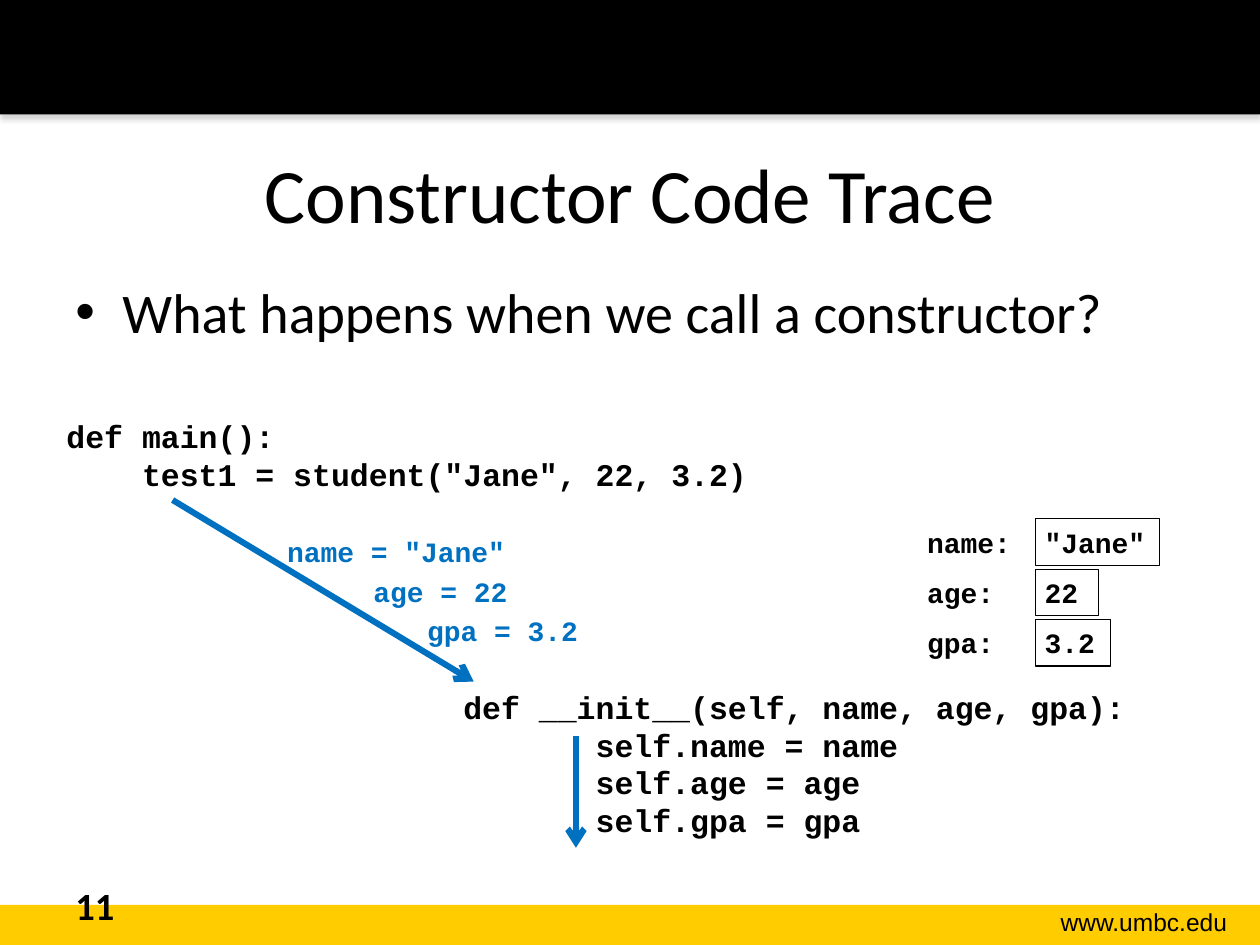
from lxml.etree import SubElement
from pptx import Presentation
from pptx.dml.color import RGBColor
from pptx.enum.shapes import MSO_CONNECTOR as Connector, MSO_SHAPE as Shape
from pptx.enum.text import MSO_ANCHOR as Anchor, PP_ALIGN as Align
from pptx.oxml.ns import qn
from pptx.util import Cm, Pt

COLORS = {"ink": "000000", "gold": "FFCC00", "trace": "0070C0", "shade": "808080"}
CODE = "Courier New"
TITLE_ONLY = 5


def color(name):
    return RGBColor.from_string(COLORS[name])


def add_xml(parent, tag, **attributes):
    return SubElement(parent, qn(tag), {key: str(value) for key, value in attributes.items()})


def write(frame, text, size=18, font="Calibri", ink="ink", bold=False,
          align=Align.LEFT, anchor=Anchor.TOP, wrap=True, bullet=None, tab=None):
    frame.word_wrap = wrap
    frame.vertical_anchor = anchor
    for number, line in enumerate(text.split("\n")):
        paragraph = frame.paragraphs[0] if number == 0 else frame.add_paragraph()
        paragraph.alignment = align
        properties = paragraph._p.get_or_add_pPr()
        if bullet:
            indent = Cm(0.95)
            properties.set("marL", str(indent))
            properties.set("indent", str(-indent))
            add_xml(properties, "a:buFont", typeface="Arial")
            add_xml(properties, "a:buChar", char=bullet)
        if tab:
            stops = add_xml(properties, "a:tabLst")
            add_xml(stops, "a:tab", pos=Cm(tab), algn="l")
        run = paragraph.add_run()
        run.text = line
        run.font.size = Pt(size)
        run.font.name = font
        run.font.bold = bold
        run.font.color.rgb = color(ink)


def add_text(shapes, box, text, **style):
    frame = shapes.add_textbox(*map(Cm, box)).text_frame
    write(frame, text, **style)


def add_rect(shapes, box, fill=None, line=None):
    rect = shapes.add_shape(Shape.RECTANGLE, *map(Cm, box))
    rect.shadow.inherit = False
    if fill:
        rect.fill.solid()
        rect.fill.fore_color.rgb = color(fill)
    else:
        rect.fill.background()
    if line:
        rect.line.color.rgb = color(line)
        rect.line.width = Pt(0.75)
    else:
        rect.line.fill.background()
    return rect


def add_arrow(shapes, start, end):
    arrow = shapes.add_connector(Connector.STRAIGHT, *map(Cm, start + end))
    arrow.line.color.rgb = color("trace")
    arrow.line.width = Pt(3.5)
    add_xml(arrow.line._get_or_add_ln(), "a:tailEnd", type="arrow")
    add_xml(arrow._element.spPr, "a:effectLst")


def add_header(slide, box):
    band = add_rect(slide.shapes, box, fill="ink")
    effects = band._element.spPr.find(qn("a:effectLst"))
    shadow = add_xml(effects, "a:outerShdw", blurRad=Pt(3.1), dist=Pt(1.8),
                     dir=90 * 60000, rotWithShape=0)
    shade = add_xml(shadow, "a:srgbClr", val=COLORS["shade"])
    add_xml(shade, "a:alpha", val=35000)


def add_footer(slide, box):
    left, top, width, height = box
    add_rect(slide.shapes, box, fill="gold")
    add_text(slide.shapes, (left + width - 5.46, top - 0.08, 5.05, 0.86),
             "www.umbc.edu", size=14, font="Arial", align=Align.RIGHT)
    add_text(slide.shapes, (left + 1.27, top - 0.59, 5.92, 1.02),
             "11", size=22, bold=True)


def add_title(slide, box, text):
    title = slide.shapes.title
    title.left, title.top, title.width, title.height = map(Cm, box)
    write(title.text_frame, text, size=44, align=Align.CENTER, anchor=Anchor.MIDDLE)


def add_caller(slide, box):
    add_text(slide.shapes, box,
             'def main():\n    test1 = student("Jane", 22, 3.2)',
             font=CODE, bold=True)


def add_constructor(slide, box):
    left, top = box[:2]
    add_text(slide.shapes, box,
             " def __init__(self, name, age, gpa):\n"
             "        self.name = name\n"
             "        self.age = age\n"
             "        self.gpa = gpa",
             font=CODE, bold=True)
    add_arrow(slide.shapes, (left + 2.9, top + 1.09), (left + 2.9, top + 3.35))


def add_arguments(slide, box):
    left, top, width, height = box
    add_arrow(slide.shapes, (left, top), (left + width, top + height))
    arguments = [('name = "Jane"', 1.98, 0.58, 5.05),
                 ("age = 22", 3.56, 1.37, 3.68),
                 ("gpa = 3.2", 4.62, 2.16, 4.06)]
    for text, right, down, span in arguments:
        add_text(slide.shapes, (left + right, top + down, span, 0.94), text,
                 size=16, font=CODE, ink="trace", bold=True,
                 align=Align.CENTER, wrap=False)


def add_attributes(slide, box):
    left, top, width, height = box
    row_height = 0.94
    attributes = [("name:", '"Jane"', 2.51), ("age:", "22", 1.27), ("gpa:", "3.2", 1.52)]
    pitch = (height - row_height) / (len(attributes) - 1)
    for row, (label, value, frame_width) in enumerate(attributes):
        row_top = top + row * pitch
        group = slide.shapes.add_group_shape()
        add_text(group.shapes, (left, row_top, width, row_height),
                 f"{label}\t{value}", size=16, font=CODE, bold=True, tab=2.37)
        add_rect(group.shapes, (left + 2.43, row_top, frame_width, row_height), line="ink")


def add_trace_slide(deck):
    slide = deck.slides.add_slide(deck.slide_layouts[TITLE_ONLY])
    add_footer(slide, (0, 18.24, 25.4, 0.81))
    add_header(slide, (0, 0, 25.4, 2.31))
    add_title(slide, (1.27, 2.29, 22.86, 3.18), "Constructor Code Trace")
    add_text(slide.shapes, (1.27, 5.46, 22.86, 11.56),
             "What happens when we call a constructor?", size=32, bullet="•")
    add_caller(slide, (1.09, 8.28, 14.22, 1.8))
    add_constructor(slide, (8.71, 13.74, 14.25, 3.33))
    add_arguments(slide, (3.48, 10.08, 6.07, 3.66))
    add_attributes(slide, (18.44, 10.46, 5.69, 2.97))


def main():
    deck = Presentation()
    deck.slide_width, deck.slide_height = Cm(25.4), Cm(19.05)
    add_trace_slide(deck)
    deck.save("out.pptx")


if __name__ == "__main__":
    main()
